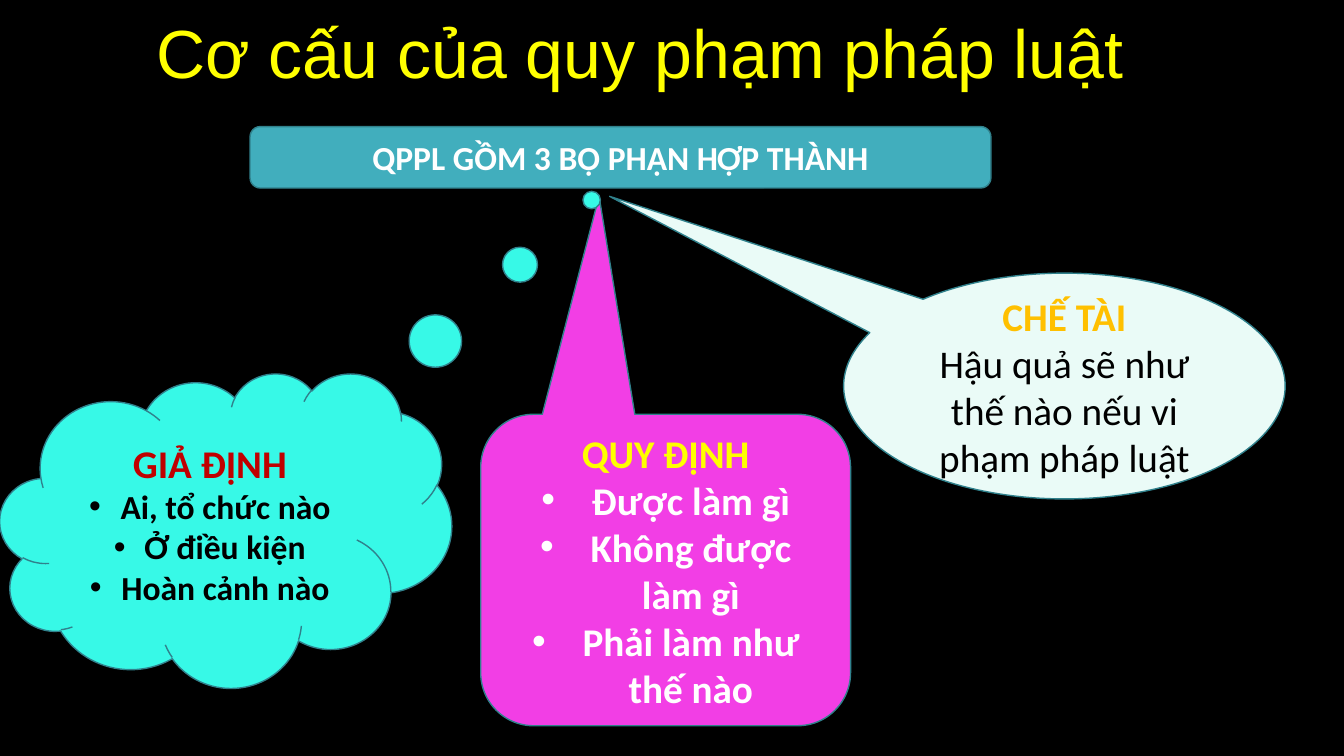
from dataclasses import dataclass

from lxml.etree import SubElement
from pptx import Presentation
from pptx.dml.color import RGBColor
from pptx.enum.shapes import MSO_SHAPE
from pptx.enum.text import MSO_ANCHOR, MSO_AUTO_SIZE, PP_ALIGN
from pptx.oxml.ns import qn
from pptx.util import Pt


@dataclass(frozen=True)
class Theme:
    background: str = "000000"
    outline: str = "30818C"
    banner: str = "41AEBD"
    sanction: str = "EAFBF7"
    rule: str = "F23EE5"
    assumption: str = "37F9E7"
    yellow: str = "FFFF00"
    gold: str = "FFC000"
    red: str = "C00000"
    white: str = "FFFFFF"
    black: str = "000000"
    title_font: str = "Arial"
    body_font: str = "Calibri"
    title_size: float = 48.6
    large: float = 28
    medium: float = 24


class SlideBuilder:
    def __init__(self, page, theme):
        self.page = page
        self.theme = theme
        fill = page.background.fill
        fill.solid()
        fill.fore_color.rgb = RGBColor.from_string(theme.background)

    def style(self, paragraph, font, size, color, bold=False):
        paragraph.font.name = font
        paragraph.font.size = Pt(size)
        paragraph.font.bold = bold
        paragraph.font.color.rgb = RGBColor.from_string(color)

    def title(self, text, left, top, width, height):
        box = self.page.shapes.title
        box.left, box.top, box.width, box.height = map(Pt, (left, top, width, height))
        frame = box.text_frame
        frame.text = text
        frame.word_wrap = True
        frame.auto_size = MSO_AUTO_SIZE.NONE
        frame.vertical_anchor = MSO_ANCHOR.MIDDLE
        paragraph = frame.paragraphs[0]
        paragraph.alignment = PP_ALIGN.LEFT
        paragraph.line_spacing = 0.9
        self.style(paragraph, self.theme.title_font, self.theme.title_size, self.theme.yellow)

    def shape(self, kind, bounds, fill, adjustments=()):
        shape = self.page.shapes.add_shape(kind, *map(Pt, bounds))
        shape.shadow.inherit = False
        shape.fill.solid()
        shape.fill.fore_color.rgb = RGBColor.from_string(fill)
        shape.line.color.rgb = RGBColor.from_string(self.theme.outline)
        shape.line.width = Pt(1)
        for index, value in enumerate(adjustments):
            shape.adjustments[index] = value
        shape.text_frame.word_wrap = True
        shape.text_frame.vertical_anchor = MSO_ANCHOR.MIDDLE
        return shape.text_frame

    def heading(self, frame, text, size, color):
        paragraph = frame.paragraphs[0]
        paragraph.text = text
        paragraph.alignment = PP_ALIGN.CENTER
        self.style(paragraph, self.theme.body_font, size, color, bold=True)

    def lines(self, frame, texts, size, color, bold=True, indent=0):
        """Add centred paragraphs, bulleted when an indent is given."""
        for text in texts:
            paragraph = frame.add_paragraph()
            paragraph.text = text
            paragraph.alignment = PP_ALIGN.CENTER
            if indent:
                self.bullet(paragraph, indent)
            self.style(paragraph, self.theme.body_font, size, color, bold)

    def bullet(self, paragraph, indent):
        properties = paragraph._p.get_or_add_pPr()
        properties.set("marL", str(Pt(indent)))
        properties.set("indent", str(-Pt(indent)))
        SubElement(properties, qn("a:buFont"), typeface="Arial")
        SubElement(properties, qn("a:buChar"), char="•")


def main():
    theme = Theme()
    deck = Presentation()
    deck.slide_width, deck.slide_height = Pt(960), Pt(540)
    page = deck.slides.add_slide(deck.slide_layouts[5])
    builder = SlideBuilder(page, theme)

    builder.title("Cơ cấu của quy phạm pháp luật", 104.4, 13.7, 752.4, 52.6)

    banner = builder.shape(
        MSO_SHAPE.ROUNDED_RECTANGLE, (178.6, 90.4, 529.2, 43.9), theme.banner)
    builder.heading(banner, "QPPL GỒM 3 BỘ PHẬN HỢP THÀNH", theme.medium, theme.white)

    sanction = builder.shape(
        MSO_SHAPE.OVAL_CALLOUT, (602.6, 195.1, 315.4, 161.3), theme.sanction,
        (-1.03, -0.84))
    builder.heading(sanction, "CHẾ TÀI", theme.large, theme.gold)
    builder.lines(sanction, ["Hậu quả sẽ như thế nào nếu vi phạm pháp luật"],
                  theme.large, theme.black, bold=False)

    rule = builder.shape(
        MSO_SHAPE.ROUNDED_RECTANGULAR_CALLOUT, (343.4, 295.9, 264.2, 222.5), theme.rule,
        (-0.18, -1.2, 0.17))
    builder.heading(rule, "QUY ĐỊNH", theme.large, theme.yellow)
    builder.lines(rule, ["Được làm gì", "Không được làm gì", "Phải làm như thế nào"],
                  theme.large, theme.white, indent=36)

    assumption = builder.shape(
        MSO_SHAPE.CLOUD_CALLOUT, (0, 266.4, 322.6, 224.6), theme.assumption,
        (0.81, -1.05))
    builder.heading(assumption, "GIẢ ĐỊNH", theme.large, theme.red)
    builder.lines(assumption, ["Ai, tổ chức nào", "Ở điều kiện", "Hoàn cảnh nào"],
                  theme.medium, theme.black, indent=22.5)

    deck.save("out.pptx")


if __name__ == "__main__":
    main()
